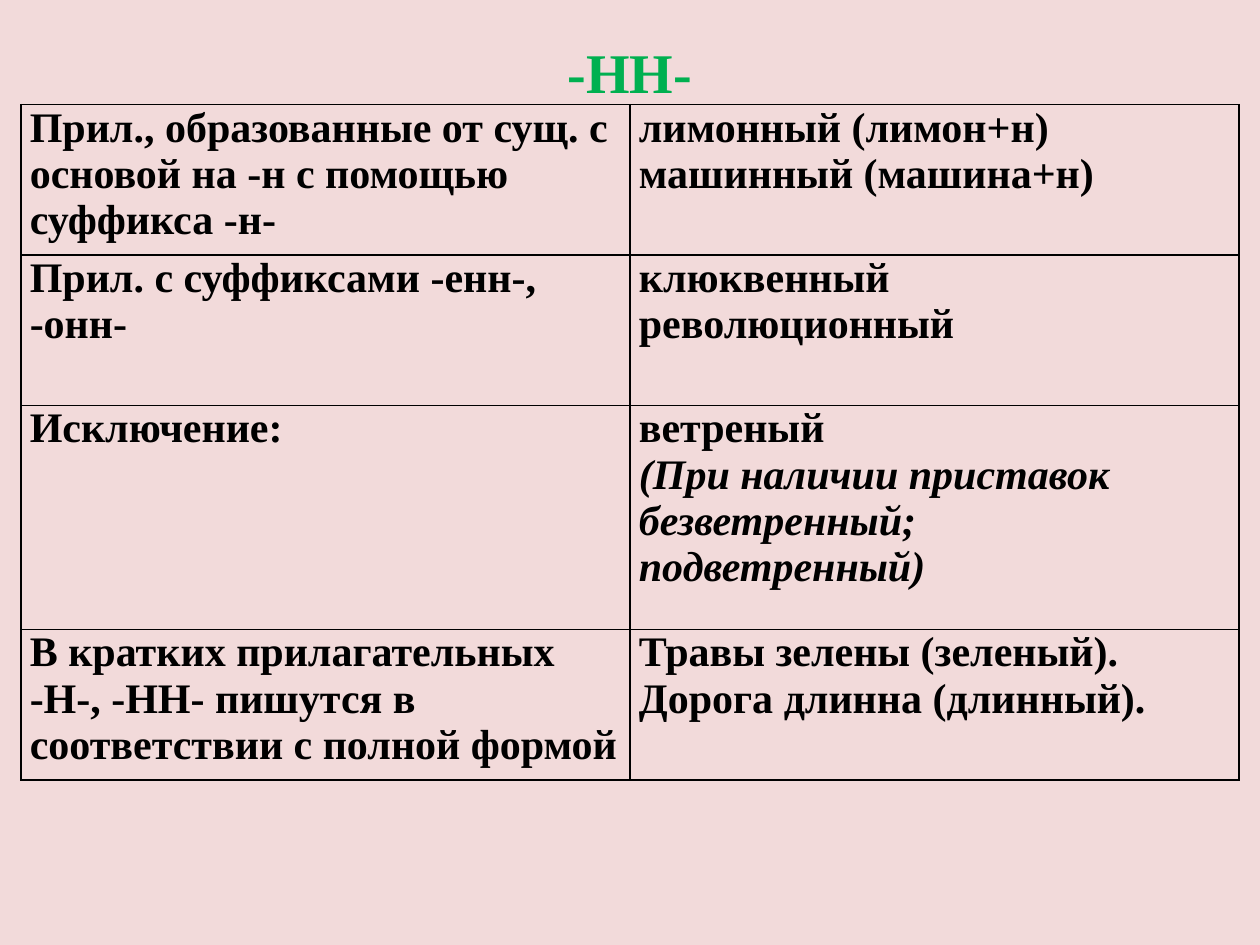
from lxml.etree import SubElement
from pptx import Presentation
from pptx.dml.color import RGBColor
from pptx.enum.text import MSO_ANCHOR, PP_ALIGN
from pptx.oxml.ns import qn
from pptx.util import Cm, Pt

TITLE = "-НН-"
# Each row: rule, example lines (text, italic), row height in cm
RULES = [
    ("Прил., образованные от сущ. с основой на -н с помощью суффикса -н-",
     [("лимонный (лимон+н)", False), ("машинный (машина+н)", False)], 3.03),
    ("Прил. с суффиксами -енн-, -онн-",
     [("клюквенный", False), ("революционный", False)], 3.03),
    ("Исключение:",
     [("ветреный", False),
      ("(При наличии приставок безветренный;", True),
      ("подветренный)", True)], 4.52),
    ("В кратких прилагательных -Н-, -НН- пишутся в соответствии с полной формой",
     [("Травы зелены (зеленый).", False), ("Дорога длинна (длинный).", False)], 3.03),
]
THEME = {
    "font": "Times New Roman",
    "background": RGBColor.from_string("F2DADA"),
    "title": RGBColor.from_string("00B050"),
    "text": RGBColor.from_string("000000"),
    "border": "000000",
    "title_size": Pt(32),
    "text_size": Pt(24),
    "border_width": Pt(1),
}
SLIDE_WIDTH, SLIDE_HEIGHT = Cm(25.4), Cm(19.05)
TITLE_TOP, TABLE_TOP = Cm(0.76), Cm(2.11)
TABLE_MARGIN, CELL_INSET = Cm(0.42), Cm(0.18)


def add_run(paragraph, text, size, color, italic=False):
    run = paragraph.add_run()
    run.text = text
    font = run.font
    font.name, font.size, font.bold, font.italic = THEME["font"], size, True, italic
    font.color.rgb = color


def set_borders(cell):
    properties = cell._tc.get_or_add_tcPr()
    for position, side in enumerate(("a:lnL", "a:lnR", "a:lnT", "a:lnB")):
        border = SubElement(properties, qn(side), w=str(THEME["border_width"]))
        fill = SubElement(border, qn("a:solidFill"))
        SubElement(fill, qn("a:srgbClr"), val=THEME["border"])
        properties.insert(position, border)  # borders precede the cell fill


def fill_cell(cell, lines):
    cell.fill.background()
    cell.margin_left = cell.margin_right = CELL_INSET
    cell.margin_top = cell.margin_bottom = 0
    cell.vertical_anchor = MSO_ANCHOR.TOP
    set_borders(cell)
    frame = cell.text_frame
    for index, (text, italic) in enumerate(lines):
        paragraph = frame.add_paragraph() if index else frame.paragraphs[0]
        add_run(paragraph, text, THEME["text_size"], THEME["text"], italic)


def add_title(slide):
    title = slide.shapes.title
    title.left, title.top = 0, TITLE_TOP
    title.width, title.height = SLIDE_WIDTH, TABLE_TOP - TITLE_TOP
    title.text_frame.vertical_anchor = MSO_ANCHOR.MIDDLE
    heading = title.text_frame.paragraphs[0]
    heading.alignment = PP_ALIGN.CENTER
    add_run(heading, TITLE, THEME["title_size"], THEME["title"])


def add_rules_table(slide):
    heights = [Cm(height) for *_, height in RULES]
    table = slide.shapes.add_table(
        len(RULES), 2, TABLE_MARGIN, TABLE_TOP,
        SLIDE_WIDTH - 2 * TABLE_MARGIN, sum(heights)).table
    table.first_row = table.horz_banding = False
    for row, height, (rule, examples, _) in zip(table.rows, heights, RULES):
        row.height = height
        rule_cell, example_cell = row.cells
        fill_cell(rule_cell, [(rule, False)])
        fill_cell(example_cell, examples)


def main():
    deck = Presentation()
    deck.slide_width, deck.slide_height = SLIDE_WIDTH, SLIDE_HEIGHT
    slide = deck.slides.add_slide(deck.slide_layouts.get_by_name("Title Only"))
    background = slide.background.fill
    background.solid()
    background.fore_color.rgb = THEME["background"]
    add_title(slide)
    add_rules_table(slide)
    deck.save("out.pptx")


if __name__ == "__main__":
    main()
